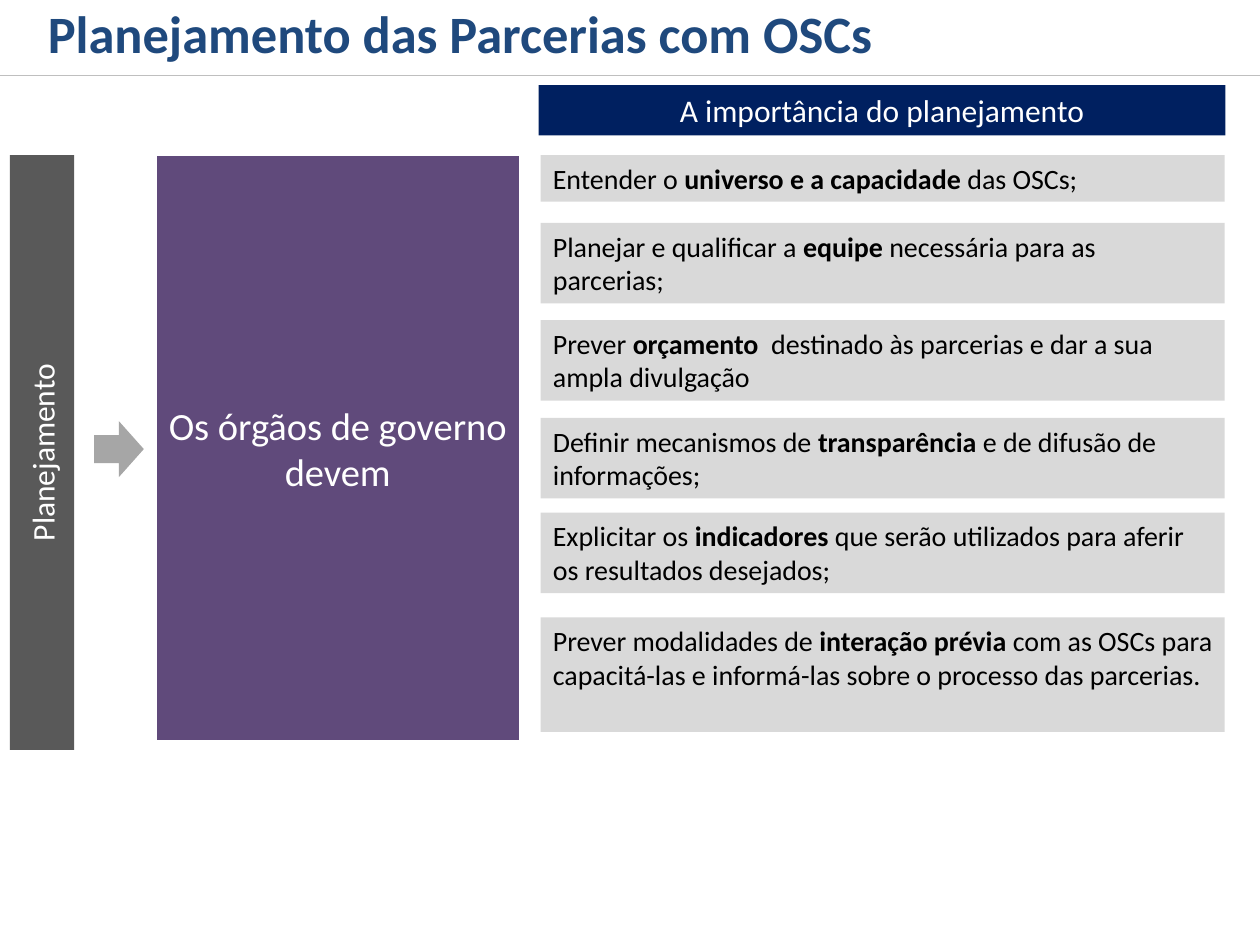
from dataclasses import dataclass

from lxml import etree
from pptx import Presentation
from pptx.dml.color import RGBColor
from pptx.enum.shapes import MSO_CONNECTOR, MSO_SHAPE
from pptx.enum.text import MSO_ANCHOR, MSO_AUTO_SIZE, PP_ALIGN
from pptx.oxml.ns import qn
from pptx.shapes.autoshape import Shape
from pptx.slide import Slide
from pptx.util import Pt

RECTANGLE = MSO_SHAPE.RECTANGLE
RIGHT_ARROW = MSO_SHAPE.RIGHT_ARROW
STRAIGHT = MSO_CONNECTOR.STRAIGHT
TOP, MIDDLE = MSO_ANCHOR.TOP, MSO_ANCHOR.MIDDLE
LEFT, CENTER = PP_ALIGN.LEFT, PP_ALIGN.CENTER
FIT_SHAPE = MSO_AUTO_SIZE.SHAPE_TO_FIT_TEXT

WHITE = RGBColor(0xFF, 0xFF, 0xFF)
BLACK = RGBColor(0, 0, 0)
TITLE_BLUE = RGBColor(0x1F, 0x49, 0x7D)
NAVY = RGBColor(0x00, 0x20, 0x60)
PURPLE = RGBColor(0x60, 0x4A, 0x7B)
DARK_GRAY = RGBColor(0x59, 0x59, 0x59)
ARROW_GRAY = RGBColor(0xA6, 0xA6, 0xA6)
RULE_GRAY = RGBColor(0xBF, 0xBF, 0xBF)
CARD_GRAY = RGBColor(0xD9, 0xD9, 0xD9)

FONT = "Calibri"
PAGE_WIDTH, PAGE_HEIGHT = 720, 540
RULE_TOP = 43.2
CARD_LEFT, CARD_WIDTH = 308.9, 391


@dataclass(frozen=True)
class Frame:
    left: float
    top: float
    width: float
    height: float


@dataclass(frozen=True)
class Span:
    text: str
    bold: bool = False


@dataclass(frozen=True)
class Card:
    top: float
    height: float
    before: str
    key: str
    after: str


CARDS = [
    Card(88.6, 26.7, "Entender o ", "universo e a capacidade ", "das OSCs;"),
    Card(127.4, 46, "Planejar e qualificar a ", "equipe", " necessária para as parcerias;"),
    Card(182.9, 46, "Prever ", "orçamento", "  destinado às parcerias e dar a sua ampla divulgação"),
    Card(238.8, 46, "Definir mecanismos de ", "transparência", " e de difusão de informações;"),
    Card(293, 46, "Explicitar os ", "indicadores",
         " que serão utilizados para aferir os resultados desejados;"),
    Card(352.8, 65.5, "Prever modalidades de ", "interação prévia",
         " com as OSCs para capacitá-las e informá-las sobre o processo das parcerias."),
]


def add_block(page: Slide, frame: Frame, color: RGBColor, kind: MSO_SHAPE = RECTANGLE) -> Shape:
    block = page.shapes.add_shape(
        kind, Pt(frame.left), Pt(frame.top), Pt(frame.width), Pt(frame.height))
    block.shadow.inherit = False
    block.fill.solid()
    block.fill.fore_color.rgb = color
    block.line.fill.background()
    return block


def write(box: Shape, spans: list[Span], size: float, color: RGBColor,
          align: PP_ALIGN = CENTER, anchor: MSO_ANCHOR = MIDDLE, wrap: bool = True) -> None:
    frame = box.text_frame
    frame.word_wrap = wrap
    frame.vertical_anchor = anchor
    para = frame.paragraphs[0]
    para.alignment = align
    for span in spans:
        run = para.add_run()
        run.text = span.text
        run.font.name = FONT
        run.font.size = Pt(size)
        run.font.bold = span.bold
        run.font.color.rgb = color


def turn_text(box: Shape) -> None:
    box.text_frame.paragraphs[0]
    box.element.txBody.find(qn("a:bodyPr")).set("vert", "vert270")


def add_rule(page: Slide) -> None:
    rule = page.shapes.add_connector(STRAIGHT, Pt(0), Pt(RULE_TOP), Pt(PAGE_WIDTH), Pt(RULE_TOP))
    rule.line.color.rgb = RULE_GRAY
    rule.line.width = Pt(0.75)
    etree.SubElement(rule.element.spPr, qn("a:effectLst"))


def add_card(page: Slide, card: Card) -> None:
    box = add_block(page, Frame(CARD_LEFT, card.top, CARD_WIDTH, card.height), CARD_GRAY)
    spans = [Span(card.before), Span(card.key, True), Span(card.after)]
    write(box, spans, 16, BLACK, LEFT, TOP)
    box.text_frame.auto_size = FIT_SHAPE


def add_title(page: Slide) -> None:
    title = page.shapes.add_textbox(Pt(20.2), Pt(-2.9), Pt(506), Pt(43.9))
    write(title, [Span("Planejamento das Parcerias com OSCs", True)], 30, TITLE_BLUE,
          LEFT, TOP, False)
    title.text_frame.auto_size = FIT_SHAPE


def main() -> None:
    deck = Presentation()
    deck.slide_width, deck.slide_height = Pt(PAGE_WIDTH), Pt(PAGE_HEIGHT)
    page = deck.slides.add_slide(deck.slide_layouts[6])

    add_rule(page)

    header = add_block(page, Frame(489.6, -133.2, 28.8, 392.4), NAVY)
    header.rotation = 90
    write(header, [Span("A importância do planejamento")], 18, WHITE)
    turn_text(header)

    stage = add_block(page, Frame(5.6, 88.6, 36.8, 340), DARK_GRAY)
    write(stage, [Span("Planejamento")], 18, WHITE)
    turn_text(stage)

    duty = add_block(page, Frame(89.3, 88.8, 207.4, 334.6), PURPLE)
    duty.line.color.rgb = WHITE
    duty.line.width = Pt(0.75)
    write(duty, [Span("Os órgãos de governo devem")], 22, WHITE)

    add_block(page, Frame(53.8, 240.7, 28.4, 31.9), ARROW_GRAY, RIGHT_ARROW)

    for card in CARDS:
        add_card(page, card)
    add_title(page)

    deck.save("out.pptx")


if __name__ == "__main__":
    main()
